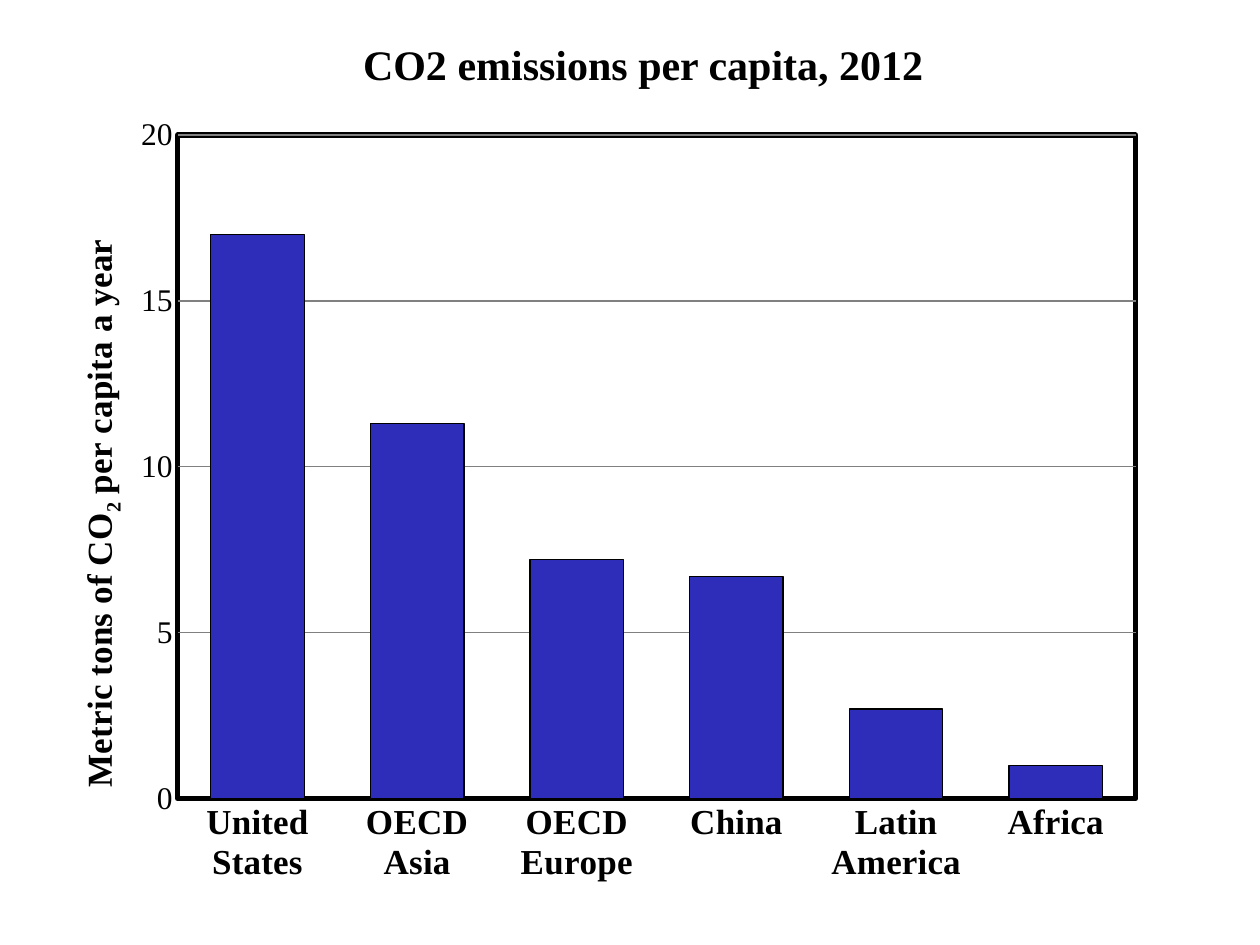
from lxml import etree
from pptx import Presentation
from pptx.chart.data import CategoryChartData
from pptx.dml.color import RGBColor
from pptx.enum.chart import XL_CHART_TYPE, XL_TICK_MARK
from pptx.enum.text import MSO_ANCHOR, PP_ALIGN
from pptx.oxml import parse_xml
from pptx.oxml.ns import nsdecls, qn
from pptx.util import Inches, Pt

COLUMN = XL_CHART_TYPE.COLUMN_CLUSTERED
NONE = XL_TICK_MARK.NONE
CENTER = PP_ALIGN.CENTER
MIDDLE = MSO_ANCHOR.MIDDLE
FACE = "Times New Roman"
BLACK = "000000"
DATA = {
    "United States": 17,
    "OECD Asia": 11.3,
    "OECD Europe": 7.2,
    "China": 6.7,
    "Latin America": 2.7,
    "Africa": 1,
}


def color(text):
    return RGBColor.from_string(text)


def style(font, size, bold=False):
    font.name = FACE
    font.size = Pt(size)
    font.bold = bold
    font.color.rgb = color(BLACK)


def stroke(line, tint, width):
    line.color.rgb = color(tint)
    line.width = Pt(width)


def arrange(parent, index, **parts):
    old = parent.find(qn("c:layout"))
    if old is not None:
        parent.remove(old)
    layout = etree.Element(qn("c:layout"))
    manual = etree.SubElement(layout, qn("c:manualLayout"))
    for name, value in parts.items():
        etree.SubElement(manual, qn("c:" + name), val=str(value))
    parent.insert(index, layout)


def add_title(slide, left, top, width, height):
    title = slide.shapes.title
    title.left, title.top, title.width, title.height = left, top, width, height
    frame = title.text_frame
    frame.word_wrap = False
    frame.vertical_anchor = MIDDLE
    frame.text = "CO2 emissions per capita, 2012"
    para = frame.paragraphs[0]
    para.alignment = CENTER
    style(para.font, 24, True)


def name_axis(axis):
    frame = axis.axis_title.text_frame
    body = frame._txBody.find(qn("a:bodyPr"))
    body.set("rot", "-5400000")
    body.set("vert", "horz")
    para = frame.paragraphs[0]
    style(para.font, 20, True)
    for text in ("Metric tons of CO", "2", " per capita a year"):
        run = para.add_run()
        run.text = text
        style(run.font, 20, True)
        if text == "2":
            run.font._element.set("baseline", "-25000")
    arrange(axis.axis_title._element, 1, xMode="edge", yMode="edge",
            x=0.01, y=0.15)


def frame_plot(chart):
    area = chart._chartSpace.chart.plotArea
    arrange(area, 0, layoutTarget="inner", xMode="edge", yMode="edge",
            x=0.105, y=0.024, w=0.877, h=0.832)
    area.append(parse_xml(
        f'<c:spPr {nsdecls("c", "a")}><a:noFill/><a:ln w="38100">'
        f'<a:solidFill><a:srgbClr val="{BLACK}"/></a:solidFill>'
        '</a:ln></c:spPr>'))


def add_bars(slide, left, top, width, height):
    data = CategoryChartData()
    data.categories = list(DATA)
    data.add_series("Series 1", list(DATA.values()))
    chart = slide.shapes.add_chart(
        COLUMN, left, top, width, height, data).chart
    chart.has_title = False
    chart.has_legend = False
    style(chart.font, 10)

    plot = chart.plots[0]
    plot.gap_width = 71
    plot.vary_by_categories = False
    bars = plot.series[0].format
    bars.fill.solid()
    bars.fill.fore_color.rgb = color("2D2DB9")
    stroke(bars.line, BLACK, 0.75)

    cats, vals = chart.category_axis, chart.value_axis
    for axis, size, bold in ((cats, 20, True), (vals, 18, False)):
        axis.major_tick_mark = axis.minor_tick_mark = NONE
        style(axis.tick_labels.font, size, bold)
        stroke(axis.format.line, BLACK, 0.75)
    vals.minimum_scale, vals.maximum_scale, vals.major_unit = 0, 20, 5
    vals.tick_labels.number_format = "0"
    vals.tick_labels.number_format_is_linked = False
    vals.has_major_gridlines = True
    stroke(vals.major_gridlines.format.line, "808080", 0.75)
    name_axis(vals)
    frame_plot(chart)


def main():
    deck = Presentation()
    deck.slide_width, deck.slide_height = Inches(10), Inches(7.5)
    slide = deck.slides.add_slide(deck.slide_layouts[5])
    add_bars(slide, Inches(0.5), Inches(0.92), Inches(8.67), Inches(6.33))
    add_title(slide, Inches(2.76), Inches(0.25), Inches(4.69), Inches(0.51))
    deck.save("out.pptx")


if __name__ == "__main__":
    main()
